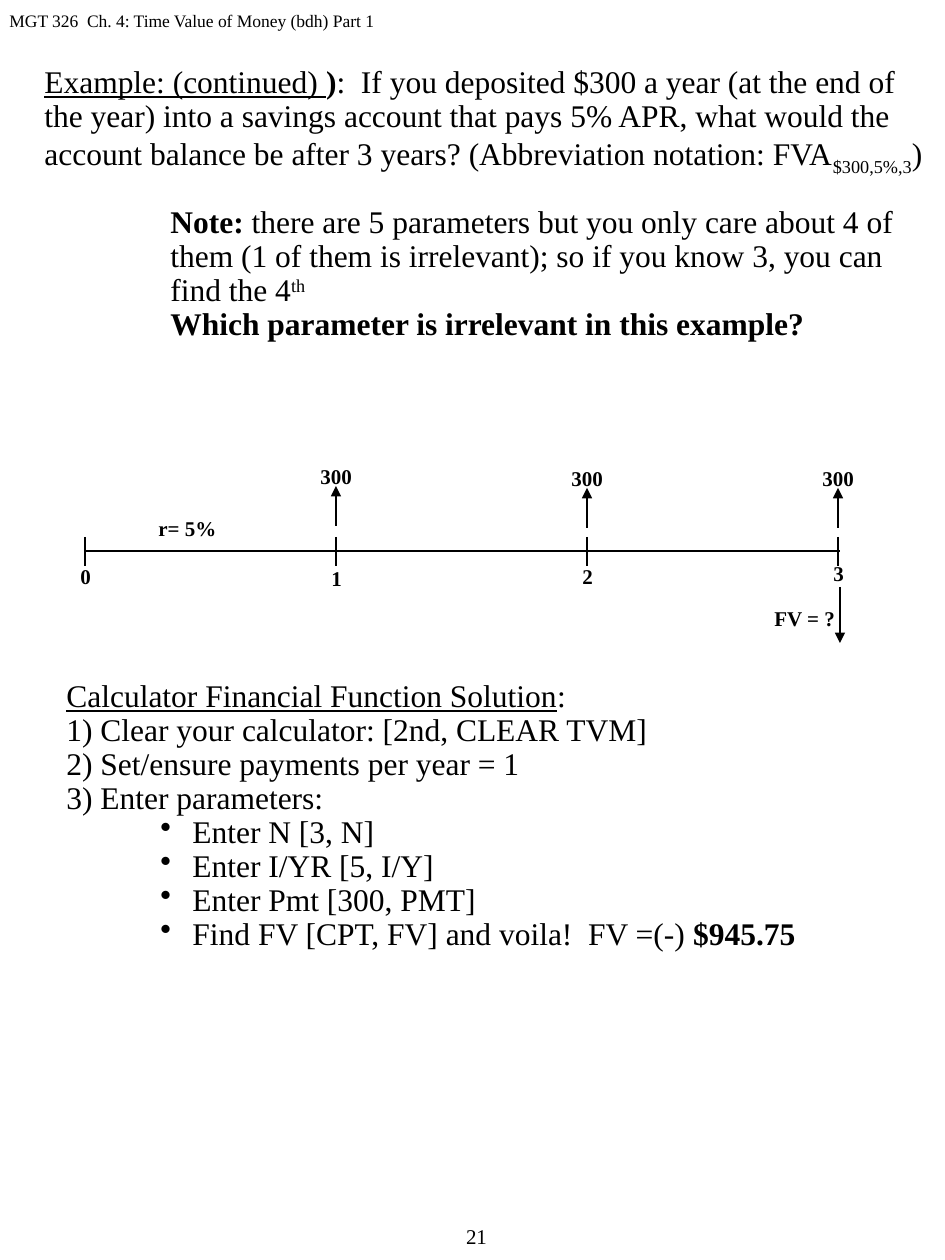
from lxml import etree
from pptx import Presentation
from pptx.dml.color import RGBColor
from pptx.enum.shapes import MSO_CONNECTOR
from pptx.enum.text import MSO_AUTO_SIZE, PP_ALIGN
from pptx.oxml.ns import qn
from pptx.util import Pt

LINE = MSO_CONNECTOR.STRAIGHT
GROW = MSO_AUTO_SIZE.SHAPE_TO_FIT_TEXT
FIXED = MSO_AUTO_SIZE.NONE
CENTER = PP_ALIGN.CENTER

SCALE = 914400 / 126
FONT = "Times New Roman"
COLORS = {"ink": "000000", "page": "FFFFFF"}
INDENT, HANG = 126, 32

# Runs are (text, style); style is "", "b", "u", "sub" or "sup"
QUESTION = [
    ("Example: (continued) ", "u"),
    (")", "b"),
    (":  If you deposited $300 a year (at the end of the year) into a savings "
     "account that pays 5% APR, what would the account balance be after "
     "3 years? (Abbreviation notation: FVA", ""),
    ("$300,5%,3", "sub"),
    (")", ""),
]
NOTE = [
    ("Note:", "b"),
    (" there are 5 parameters but you only care about 4 of them (1 of them is "
     "irrelevant); so if you know 3, you can find the 4", ""),
    ("th", "sup"),
]
ASK = [("Which parameter is irrelevant in this example?", "b")]
STEPS = [
    [("Calculator Financial Function Solution", "u"), (":", "")],
    [("1) Clear your calculator: [2nd, CLEAR TVM]", "")],
    [("2) Set/ensure payments per year = 1", "")],
    [("3) Enter parameters:", "")],
]
KEYS = [
    [("Enter N [3, N]", "")],
    [("Enter I/YR [5, I/Y]", "")],
    [("Enter Pmt [300, PMT]", "")],
    [("Find FV [CPT, FV] and voila!  FV =(-) ", ""), ("$945.75", "b")],
]
SHIFTS = {"sub": "-25000", "sup": "30000"}


def px(n):
    return round(n * SCALE)


def color(name):
    return RGBColor.from_string(COLORS[name])


def add_box(slide, left, top, width, height, wrap=True, grow=True):
    box = slide.shapes.add_textbox(px(left), px(top), px(width), px(height))
    frame = box.text_frame
    frame.word_wrap = wrap
    frame.auto_size = GROW if grow else FIXED
    return frame


def set_font(para, size, bold=None):
    font = para.font
    font.name, font.size, font.bold = FONT, Pt(size), bold
    font.color.rgb = color("ink")


def add_label(slide, text, *place, size=12, bold=True, align=None, **kind):
    para = add_box(slide, *place, **kind).paragraphs[0]
    para.text = text
    para.alignment = align
    set_font(para, size, bold)


def add_para(frame, runs, indent=0, bullet=False, gap=0):
    para = frame.paragraphs[0]
    if para.runs:
        para = frame.add_paragraph()
    set_font(para, 18)
    para.line_spacing = 0.9
    para.space_before = Pt(gap)
    props = para._p.get_or_add_pPr()
    if indent:
        props.set("marL", str(px(indent)))
    if bullet:
        para.level = 2
        props.set("indent", str(-px(HANG)))
        mark = etree.Element(qn("a:buChar"), char="•")
        props.find(qn("a:defRPr")).addprevious(mark)
    for text, style in runs:
        run = para.add_run()
        run.text = text
        if style == "b":
            run.font.bold = True
        elif style == "u":
            run.font.underline = True
        elif style in SHIFTS:
            run._r.get_or_add_rPr().set("baseline", SHIFTS[style])


def add_line(slide, x1, y1, x2, y2, arrow=False):
    line = slide.shapes.add_connector(LINE, px(x1), px(y1), px(x2), px(y2))
    line.line.color.rgb = color("ink")
    line.line.width = Pt(1.25)
    if arrow:
        etree.SubElement(line.line._get_or_add_ln(), qn("a:tailEnd"),
                         type="triangle")
    etree.SubElement(line._element.spPr, qn("a:effectLst"))


def add_timeline(slide):
    start, step = 85, 251
    add_line(slide, 84, 551, 840, 551)
    # Year ticks: top of year label, top of payment label
    tops = [(557, None), (559, 457), (557, 459), (554, 459)]
    for year, (low, high) in enumerate(tops):
        x = start + year * step
        add_line(slide, x, 537, x, 566)
        add_label(slide, str(year), x - 17, low, 35, 38, wrap=False)
        if high:
            add_line(slide, x, high + 69, x, high + 29, arrow=True)
            add_label(slide, "300", x - 28, high, 57, 38, wrap=False)
    add_label(slide, "r= 5%", 146, 509, 84, 38, wrap=False)
    # Future value
    add_line(slide, 840, 587, 840, 643, arrow=True)
    add_label(slide, "FV = ?", 762, 599, 87, 38, wrap=False)


def main():
    deck = Presentation()
    deck.slide_width, deck.slide_height = px(945), px(1260)
    slide = deck.slides.add_slide(deck.slide_layouts[6])
    slide.background.fill.solid()
    slide.background.fill.fore_color.rgb = color("page")

    # Header and page number
    add_label(slide, "MGT 326  Ch. 4: Time Value of Money (bdh) Part 1",
              -3, 4, 585, 38, size=10, bold=False, grow=False)
    add_label(slide, "21", 402, 1217, 149, 40, bold=False, align=CENTER,
              grow=False)

    # Question and note
    frame = add_box(slide, 32, 60, 914, 323)
    add_para(frame, QUESTION)
    add_para(frame, NOTE, INDENT, gap=19)
    add_para(frame, ASK, INDENT)

    # Calculator steps
    frame = add_box(slide, 54, 674, 891, 287)
    for runs in STEPS:
        add_para(frame, runs)
    for runs in KEYS:
        add_para(frame, runs, INDENT, bullet=True)

    add_timeline(slide)
    deck.save("out.pptx")


if __name__ == "__main__":
    main()
